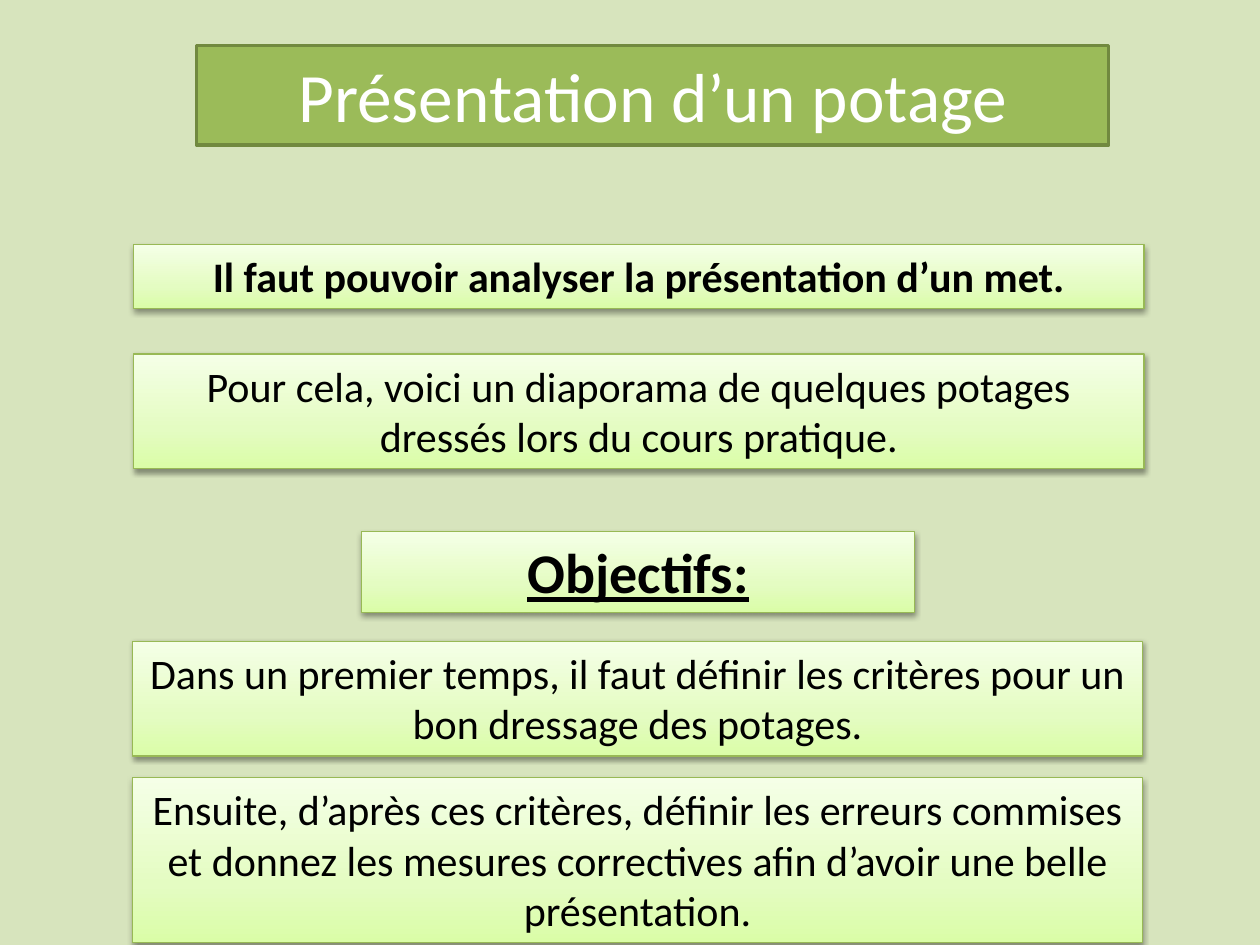
import copy

import pptx
import pptx.dml.color
import pptx.enum.dml
import pptx.enum.shapes
import pptx.enum.text
import pptx.oxml
import pptx.oxml.ns
import pptx.util
from pptx.util import Inches

RGBColor = pptx.dml.color.RGBColor
BACKGROUND = RGBColor(0xD7, 0xE4, 0xBD)
TITLE_FILL = RGBColor(0x9B, 0xBB, 0x59)
TITLE_LINE = RGBColor(0x71, 0x89, 0x3F)
PANEL_LINE = RGBColor(0x98, 0xB9, 0x55)
WHITE = RGBColor(0xFF, 0xFF, 0xFF)
BLACK = RGBColor(0, 0, 0)
PANEL_STOPS = [
    (0, RGBColor(0xDA, 0xFD, 0xA7)),
    (0.35, RGBColor(0xE4, 0xFC, 0xC2)),
    (1, RGBColor(0xF5, 0xFF, 0xE7)),
]
SHADOW = (
    f'<a:outerShdw {pptx.oxml.ns.nsdecls("a")} blurRad="40000" dist="20000" '
    'dir="5400000" rotWithShape="0"><a:srgbClr val="000000">'
    '<a:alpha val="38000"/></a:srgbClr></a:outerShdw>'
)

BODY = {"size": pptx.util.Pt(24), "bold": False}
STRONG = {"size": pptx.util.Pt(24), "bold": True}
HEADING = {"size": pptx.util.Pt(32), "bold": True, "underline": True}
TITLE = {"size": pptx.util.Pt(39.6)}

PANELS = [
    ((1.06, 1.94, 8.02, 0.51), STRONG,
     "Il faut pouvoir analyser la présentation d’un met."),
    ((1.06, 2.81, 8.02, 0.91), BODY,
     "Pour cela, voici un diaporama de quelques potages dressés lors du cours pratique."),
    ((1.05, 5.09, 8.02, 0.91), BODY,
     "Dans un premier temps, il faut définir les critères pour un bon dressage des potages."),
    ((1.05, 6.17, 8.02, 1.31), BODY,
     "Ensuite, d’après ces critères, définir les erreurs commises et donnez les mesures "
     "correctives afin d’avoir une belle présentation."),
    ((2.87, 4.22, 4.39, 0.64), HEADING, "Objectifs:"),
]


def add_box(page, box, line_color, line_width):
    shape = page.shapes.add_shape(
        pptx.enum.shapes.MSO_SHAPE.RECTANGLE, *(Inches(length) for length in box))
    shape.line.color.rgb = line_color
    shape.line.width = pptx.util.Pt(line_width)
    shape.shadow.inherit = False
    return shape


def write_text(shape, text, color, formats, anchor):
    frame = shape.text_frame
    frame.word_wrap = True
    frame.vertical_anchor = anchor
    para = frame.paragraphs[0]
    para.alignment = pptx.enum.text.PP_ALIGN.CENTER
    span = para.add_run()
    span.text = text
    span.font.name = "Calibri"
    span.font.color.rgb = color
    for name, value in formats.items():
        setattr(span.font, name, value)


def fill_gradient(shape):
    shape.fill.gradient()
    shape.fill.gradient_angle = 90
    stop_list = shape.element.spPr.find(".//" + pptx.oxml.ns.qn("a:gsLst"))
    stop_list.insert(1, copy.deepcopy(stop_list[0]))
    for stop, (position, color) in zip(shape.fill.gradient_stops, PANEL_STOPS):
        stop.position = position
        stop.color.rgb = color


def add_title(page, box, text):
    shape = add_box(page, box, TITLE_LINE, 2)
    shape.line.width = pptx.util.Pt(2)
    shape.fill.solid()
    shape.fill.fore_color.rgb = TITLE_FILL
    write_text(shape, text, WHITE, TITLE, pptx.enum.text.MSO_ANCHOR.MIDDLE)


def add_panel(page, box, formats, text):
    shape = add_box(page, box, PANEL_LINE, 0.75)
    fill_gradient(shape)
    effects = shape.element.spPr.find(pptx.oxml.ns.qn("a:effectLst"))
    effects.append(pptx.oxml.parse_xml(SHADOW))
    write_text(shape, text, BLACK, formats, pptx.enum.text.MSO_ANCHOR.TOP)
    shape.text_frame.auto_size = pptx.enum.text.MSO_AUTO_SIZE.SHAPE_TO_FIT_TEXT


def main():
    deck = pptx.Presentation()
    deck.slide_width = Inches(10)
    deck.slide_height = Inches(7.5)
    page = deck.slides.add_slide(deck.slide_layouts[6])
    page.background.fill.solid()
    page.background.fill.fore_color.rgb = BACKGROUND
    add_title(page, (1.56, 0.36, 7.24, 0.79), "Présentation d’un potage")
    for box, formats, text in PANELS:
        add_panel(page, box, formats, text)
    deck.save("out.pptx")


if __name__ == "__main__":
    main()
